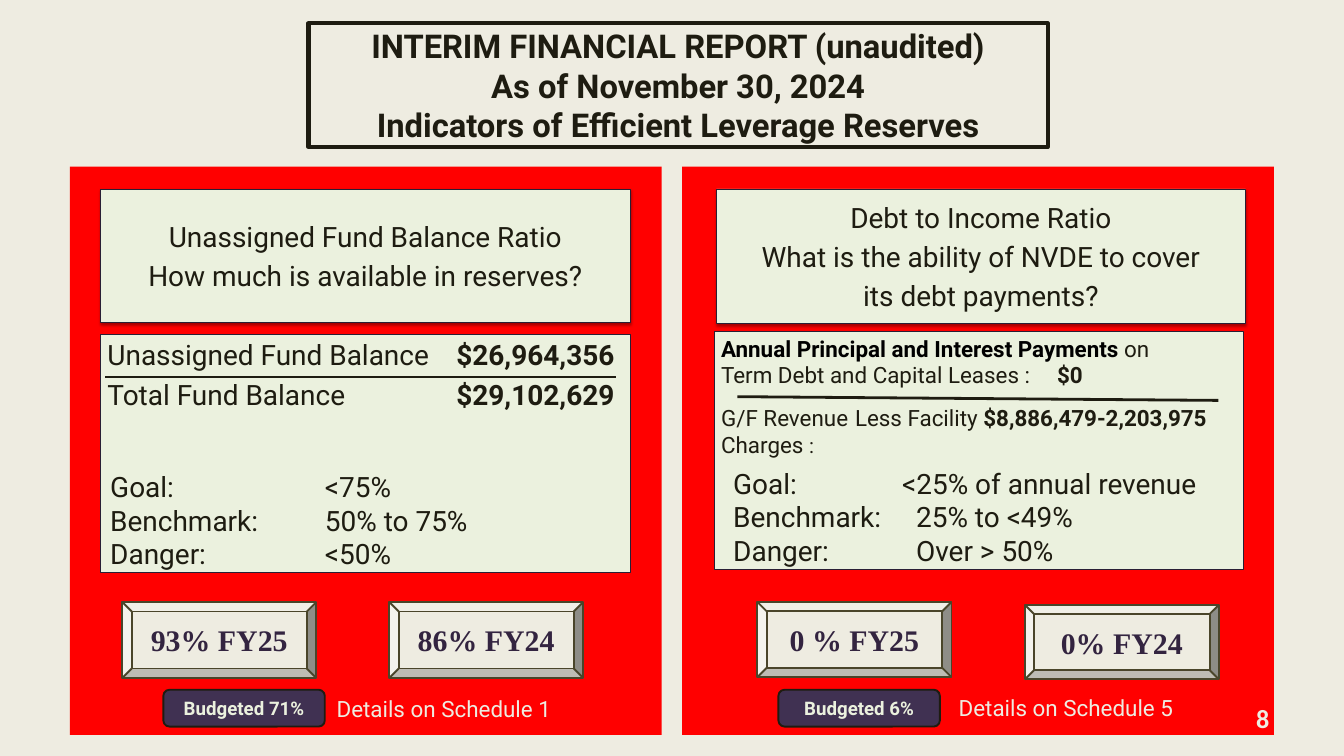
from dataclasses import dataclass
from typing import NamedTuple, Optional

from lxml import etree
from pptx import Presentation
from pptx.dml.color import RGBColor
from pptx.enum.shapes import MSO_CONNECTOR, MSO_SHAPE
from pptx.enum.text import MSO_ANCHOR, MSO_AUTO_SIZE, PP_ALIGN
from pptx.oxml.ns import qn
from pptx.util import Pt

RECTANGLE, ROUNDED, BEVEL = MSO_SHAPE.RECTANGLE, MSO_SHAPE.ROUNDED_RECTANGLE, MSO_SHAPE.BEVEL
STRAIGHT = MSO_CONNECTOR.STRAIGHT
LEFT, CENTER, RIGHT = PP_ALIGN.LEFT, PP_ALIGN.CENTER, PP_ALIGN.RIGHT
TOP, MIDDLE = MSO_ANCHOR.TOP, MSO_ANCHOR.MIDDLE
FIT_SHAPE, NO_FIT = MSO_AUTO_SIZE.SHAPE_TO_FIT_TEXT, MSO_AUTO_SIZE.NONE

CREAM = RGBColor(0xEE, 0xEC, 0xE1)
RED = RGBColor(0xFF, 0x00, 0x00)
INK = RGBColor(0x1E, 0x1C, 0x11)
BLACK = RGBColor(0x00, 0x00, 0x00)
PALE_GREEN = RGBColor(0xEB, 0xF1, 0xDE)
DARK_PLUM = RGBColor(0x29, 0x1F, 0x35)
PLUM = RGBColor(0x33, 0x24, 0x40)
PURPLE = RGBColor(0x40, 0x31, 0x52)
OLIVE = RGBColor(0x4A, 0x45, 0x2A)


class Box(NamedTuple):
    left: float
    top: float
    width: float
    height: float


class Run(NamedTuple):
    text: str
    bold: bool = False
    color: Optional[RGBColor] = None
    size: Optional[float] = None


class Line(NamedTuple):
    runs: tuple
    tab: float = 0
    tab_align: str = "l"
    space_before: float = 0


@dataclass
class Indicator:
    panel: Box
    question_box: Box
    question: list
    ratio_box: Box
    ratio: list
    ratio_size: float
    rule: tuple
    targets_box: Box
    targets: list
    results: list
    badge_box: Box
    badge: str
    details_box: Box
    details: str


def plain(*texts: str, gap: float = 0) -> list:
    return [Line((Run(text),), space_before=gap if index else 0)
            for index, text in enumerate(texts)]


def write_text(shape, lines: list, *, size: float, color: RGBColor = INK, font: str = "Roboto",
               bold: bool = False, align=LEFT, anchor=TOP, margin: Optional[float] = None,
               auto_size=NO_FIT) -> None:
    frame = shape.text_frame
    frame.word_wrap, frame.auto_size, frame.vertical_anchor = True, auto_size, anchor
    if margin is not None:
        frame.margin_left = frame.margin_right = Pt(margin)
        frame.margin_top = frame.margin_bottom = Pt(margin)
    for index, line in enumerate(lines):
        paragraph = frame.add_paragraph() if index else frame.paragraphs[0]
        paragraph.alignment = align
        paragraph.space_before = Pt(line.space_before)
        if line.tab:
            tab_list = etree.SubElement(paragraph._p.get_or_add_pPr(), qn("a:tabLst"))
            etree.SubElement(tab_list, qn("a:tab"), pos=str(Pt(line.tab)), algn=line.tab_align)
        for item in line.runs:
            for part, text in enumerate(item.text.split("\n")):
                if part:
                    paragraph.add_line_break()
                run = paragraph.add_run()
                run.text = text
                run.font.name = font
                run.font.size = Pt(item.size or size)
                run.font.bold = bold or item.bold
                run.font.color.rgb = item.color or color


def add_box(slide, box: Box, fill: RGBColor, *, kind=RECTANGLE, line: Optional[RGBColor] = None,
            line_width: float = 0.75, shadow: bool = False):
    shape = slide.shapes.add_shape(kind, *map(Pt, box))
    shape.fill.solid()
    shape.fill.fore_color.rgb = fill
    if line is None:
        shape.line.fill.background()
    else:
        shape.line.color.rgb = line
        shape.line.width = Pt(line_width)
    shape.shadow.inherit = False
    if shadow:
        effects = shape._element.spPr.find(qn("a:effectLst"))
        outer = etree.SubElement(effects, qn("a:outerShdw"), blurRad=str(Pt(3.1)),
                                 dist=str(Pt(1.8)), dir="5400000", rotWithShape="0")
        shade = etree.SubElement(outer, qn("a:srgbClr"), val="000000")
        etree.SubElement(shade, qn("a:alpha"), val="35000")
    return shape


def add_text(slide, box: Box, lines: list, **style) -> None:
    write_text(slide.shapes.add_textbox(*map(Pt, box)), lines, auto_size=FIT_SHAPE, **style)


def add_rule(slide, ends: tuple) -> None:
    rule = slide.shapes.add_connector(STRAIGHT, *map(Pt, ends))
    rule.line.color.rgb = INK
    rule.line.width = Pt(3)
    etree.SubElement(rule._element.spPr, qn("a:effectLst"))


def draw_indicator(slide, indicator: Indicator) -> None:
    add_box(slide, indicator.panel, RED)
    question = add_box(slide, indicator.question_box, PALE_GREEN, line=DARK_PLUM, shadow=True)
    write_text(question, indicator.question, size=30, align=CENTER, anchor=MIDDLE)
    ratio = add_box(slide, indicator.ratio_box, PALE_GREEN, line=DARK_PLUM)
    write_text(ratio, indicator.ratio, size=indicator.ratio_size)
    add_rule(slide, indicator.rule)
    add_text(slide, indicator.targets_box, indicator.targets, size=30)
    for box, text in indicator.results:
        result = add_box(slide, box, CREAM, kind=BEVEL, line=OLIVE, line_width=2)
        write_text(result, plain(text), size=32, color=PLUM, font="Times New Roman",
                   bold=True, align=CENTER, anchor=MIDDLE)
    badge = add_box(slide, indicator.badge_box, PURPLE, kind=ROUNDED, line=INK, line_width=2)
    write_text(badge, plain(indicator.badge), size=20, color=PALE_GREEN, bold=True,
               align=CENTER, anchor=MIDDLE)
    add_text(slide, indicator.details_box, plain(indicator.details), size=24, color=CREAM)


FUND_BALANCE = Indicator(
    panel=Box(75, 178.5, 634, 609),
    question_box=Box(108, 203, 567, 142.5),
    question=plain("Unassigned Fund Balance Ratio", "How much is available in reserves?", gap=6),
    ratio_box=Box(108, 358.5, 567, 255),
    ratio=[Line((Run("Unassigned Fund Balance\t"), Run("$26,964,356", True)), 543.5, "r"),
           Line((Run("Total Fund Balance\t"), Run("$29,102,629", True)), 543.5, "r", 6)],
    ratio_size=30,
    rule=(113, 404, 659.5, 404),
    targets_box=Box(111, 499.5, 567, 116.5),
    targets=[Line((Run(text),), 230)
             for text in ("Goal:\t<75%", "Benchmark:\t50% to 75%", "Danger:\t<50%")],
    results=[(Box(131, 645, 208, 81.5), "93% FY25"), (Box(417, 645, 208, 81.5), "86% FY24")],
    badge_box=Box(175, 739, 173, 39.5), badge="Budgeted 71%",
    details_box=Box(353.5, 741.5, 250.5, 36), details="Details on Schedule 1")

DEBT_TO_INCOME = Indicator(
    panel=Box(731, 178.5, 634, 609),
    question_box=Box(767.5, 202.5, 567, 144),
    question=plain("Debt to Income Ratio", "What is the ability of NVDE to cover",
                   "its debt payments?", gap=6),
    ratio_box=Box(765.5, 355, 567, 255),
    ratio=[Line((Run("Annual Principal and Interest Payments ", True, BLACK), Run("on"))),
           Line((Run("Term Debt and Capital Leases :\t"), Run("$0", True)), 360),
           Line((Run("G/F Revenue\tLess Facility "), Run("$8,886,479-2,203,975", True)),
                143.5, space_before=17),
           Line((Run("Charges "), Run(":", size=22)))],
    ratio_size=24,
    rule=(790, 425, 1305.5, 429),
    targets_box=Box(778.5, 496, 540, 116.5),
    targets=[Line((Run("Goal:\t<25% of annual revenue"),), 181),
             Line((Run("Benchmark:\t25% to <49%"),), 196),
             Line((Run("Danger:\tOver > 50%"),), 196)],
    results=[(Box(811.5, 645, 208, 80.5), "0 % FY25"), (Box(1098, 648, 208, 80), "0% FY24")],
    badge_box=Box(834, 739, 173, 39.5), badge="Budgeted 6%",
    details_box=Box(1020, 740, 276, 36), details="Details on Schedule 5")


def main() -> None:
    presentation = Presentation()
    presentation.slide_width, presentation.slide_height = Pt(1440), Pt(810)
    slide = presentation.slides.add_slide(presentation.slide_layouts[5])
    slide.background.fill.solid()
    slide.background.fill.fore_color.rgb = CREAM

    # Framed title
    title = slide.shapes.title
    title.left, title.top, title.width, title.height = map(Pt, Box(330.5, 25, 792, 132.5))
    title.line.color.rgb = INK
    title.line.width = Pt(4.5)
    heading = ("INTERIM FINANCIAL REPORT (unaudited)\nAs of November 30, 2024\n"
               "Indicators of Efficient Leverage Reserves")
    write_text(title, plain(heading), size=35.1, bold=True, align=CENTER, anchor=MIDDLE, margin=0)

    # Indicator panels
    for indicator in (FUND_BALANCE, DEBT_TO_INCOME):
        draw_indicator(slide, indicator)

    # Page number
    add_text(slide, Box(1330, 752.5, 30, 34), plain("8"), size=28, color=CREAM, font="Calibri",
             bold=True, align=RIGHT, margin=0)
    presentation.save("out.pptx")


if __name__ == "__main__":
    main()
